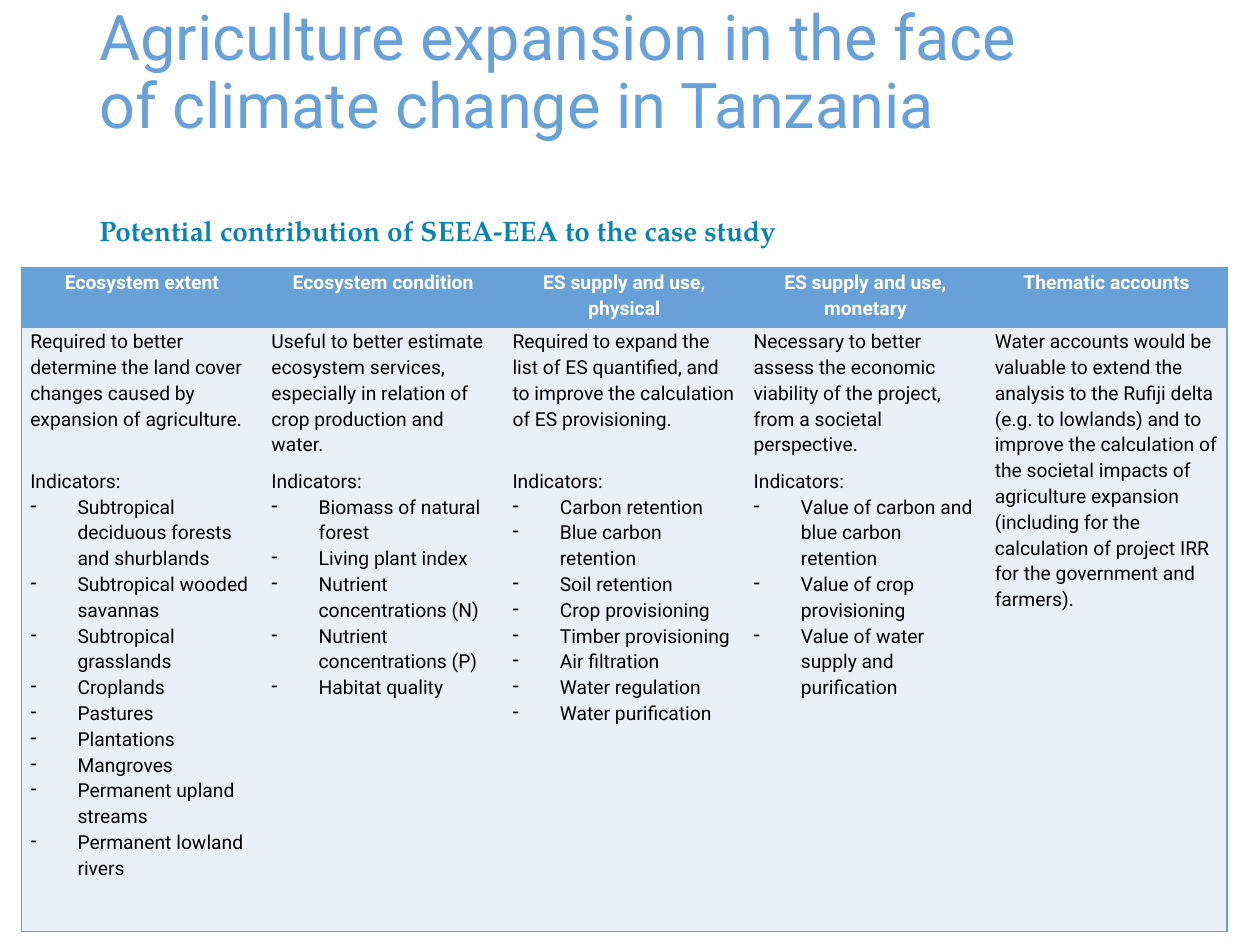
from dataclasses import dataclass

from lxml.etree import SubElement as Sub
from pptx import Presentation
from pptx.dml.color import RGBColor as RGB
from pptx.enum.text import MSO_ANCHOR as Anchor, PP_ALIGN as Align
from pptx.oxml.ns import qn
from pptx.util import Pt


@dataclass(frozen=True)
class Theme:
    blue: str = "68A1D7"
    teal: str = "0984AF"
    pale: str = "EBF0F8"
    white: str = "FFFFFF"
    black: str = "000000"
    sans: str = "Roboto"
    serif: str = "TeX Gyre Pagella"
    title: float = 36
    lead: float = 16
    body: float = 11


@dataclass(frozen=True)
class Style:
    font: str
    size: float
    color: str
    bold: bool = False


@dataclass(frozen=True)
class Column:
    head: str
    text: str
    items: tuple[str, ...] = ()
    gap: float = 6  # points between the text and its indicators


T = Theme()
TITLE = Style(T.sans, T.title, T.blue)
LEAD = Style(T.serif, T.lead, T.teal, True)
HEAD = Style(T.sans, T.body, T.white, True)
BODY = Style(T.sans, T.body, T.black)
WIDE = 20.8  # usual gap plus one line, to level the indicator lists
COLUMNS = (
    Column("Ecosystem extent",
           "Required to better determine the land cover changes caused by "
           "expansion of agriculture.",
           ("Subtropical deciduous forests and shurblands",
            "Subtropical wooded savannas", "Subtropical grasslands",
            "Croplands", "Pastures", "Plantations", "Mangroves",
            "Permanent upland streams", "Permanent lowland rivers"), WIDE),
    Column("Ecosystem condition",
           "Useful to better estimate ecosystem services, especially in "
           "relation of crop production and water.",
           ("Biomass of natural forest", "Living plant index",
            "Nutrient concentrations (N)", "Nutrient concentrations (P)",
            "Habitat quality")),
    Column("ES supply and use, physical",
           "Required to expand the list of ES quantified, and to improve "
           "the calculation of ES provisioning.",
           ("Carbon retention", "Blue carbon retention", "Soil retention",
            "Crop provisioning", "Timber provisioning", "Air filtration",
            "Water regulation", "Water purification"), WIDE),
    Column("ES supply and use, monetary",
           "Necessary to better assess the economic viability of the "
           "project, from a societal perspective.",
           ("Value of carbon and blue carbon retention",
            "Value of crop provisioning",
            "Value of water supply and purification")),
    Column("Thematic accounts",
           "Water accounts would be valuable to extend the analysis to the "
           "Rufiji delta (e.g. to lowlands) and to improve the calculation "
           "of the societal impacts of agriculture expansion (including for "
           "the calculation of project IRR for the government and farmers)."),
)


def write(par, text: str, style: Style, line: float, after: float = 0,
          align=Align.LEFT, bullet: bool = False) -> None:
    """Fill a paragraph with one styled run."""
    if bullet:
        props = par._p.get_or_add_pPr()
        props.set("marL", str(Pt(27)))
        props.set("indent", str(-Pt(27)))
        Sub(props, qn("a:buChar"), char="-")
    par.alignment = align
    par.line_spacing = line
    par.space_before = Pt(0)
    par.space_after = Pt(after)
    run = par.add_run()
    run.text = text
    font = run.font
    font.name, font.size, font.bold = style.font, Pt(style.size), style.bold
    font.color.rgb = RGB.from_string(style.color)


def label(slide, box: tuple[float, ...], text: str, style: Style,
          line: float, anchor=Anchor.TOP) -> None:
    """Add a wrapped text box; box is left, top, width, height."""
    frame = slide.shapes.add_textbox(*map(Pt, box)).text_frame
    frame.word_wrap = True
    frame.vertical_anchor = anchor
    write(frame.paragraphs[0], text, style, line)


def dress(cell, fill: str, edges: str) -> None:
    """Set margins, borders on the named edges only, and fill."""
    cell.margin_left = cell.margin_right = Pt(5)
    cell.margin_top = cell.margin_bottom = Pt(0)
    props = cell._tc.get_or_add_tcPr()
    for side in "LRTB":
        edge = Sub(props, qn(f"a:ln{side}"), w=str(Pt(1)))
        if side in edges:
            paint = Sub(edge, qn("a:solidFill"))
            Sub(paint, qn("a:srgbClr"), val=T.blue)
        else:
            Sub(edge, qn("a:noFill"))
    cell.fill.solid()
    cell.fill.fore_color.rgb = RGB.from_string(fill)


def accounts(slide, cols: tuple[Column, ...]) -> None:
    """Draw the table of accounts, one column each."""
    last = len(cols) - 1
    grid = slide.shapes.add_table(2, len(cols), Pt(12.3), Pt(153.2),
                                  Pt(689), Pt(379)).table
    grid.rows[0].height, grid.rows[1].height = Pt(34), Pt(345)
    for i, col in enumerate(cols):
        grid.columns[i].width = Pt(137.8)
        sides = "L" * (i == 0) + "R" * (i == last)
        top, low = grid.cell(0, i), grid.cell(1, i)
        dress(top, T.blue, sides + "T")
        dress(low, T.pale, sides + "B")

        write(top.text_frame.paragraphs[0], col.head, HEAD, 1.15, 6,
              Align.CENTER)
        frame = low.text_frame
        write(frame.paragraphs[0], col.text, BODY, 1.15, col.gap)
        if col.items:
            write(frame.add_paragraph(), "Indicators:", BODY, 1.15)
        for item in col.items:
            write(frame.add_paragraph(), item, BODY, 1.15, bullet=True)


def main() -> None:
    deck = Presentation()
    deck.slide_width, deck.slide_height = Pt(720), Pt(540)
    slide = deck.slides.add_slide(deck.slide_layouts[6])

    # Headings
    label(slide, (49.7, 38.2, 540, 46.8),
          "Agriculture expansion in the face of climate change in Tanzania",
          TITLE, 0.9, Anchor.BOTTOM)
    label(slide, (49.7, 116.6, 540, 260.6),
          "Potential contribution of SEEA-EEA to the case study", LEAD, 1.1)

    # Table
    accounts(slide, COLUMNS)
    deck.save("out.pptx")


if __name__ == "__main__":
    main()
